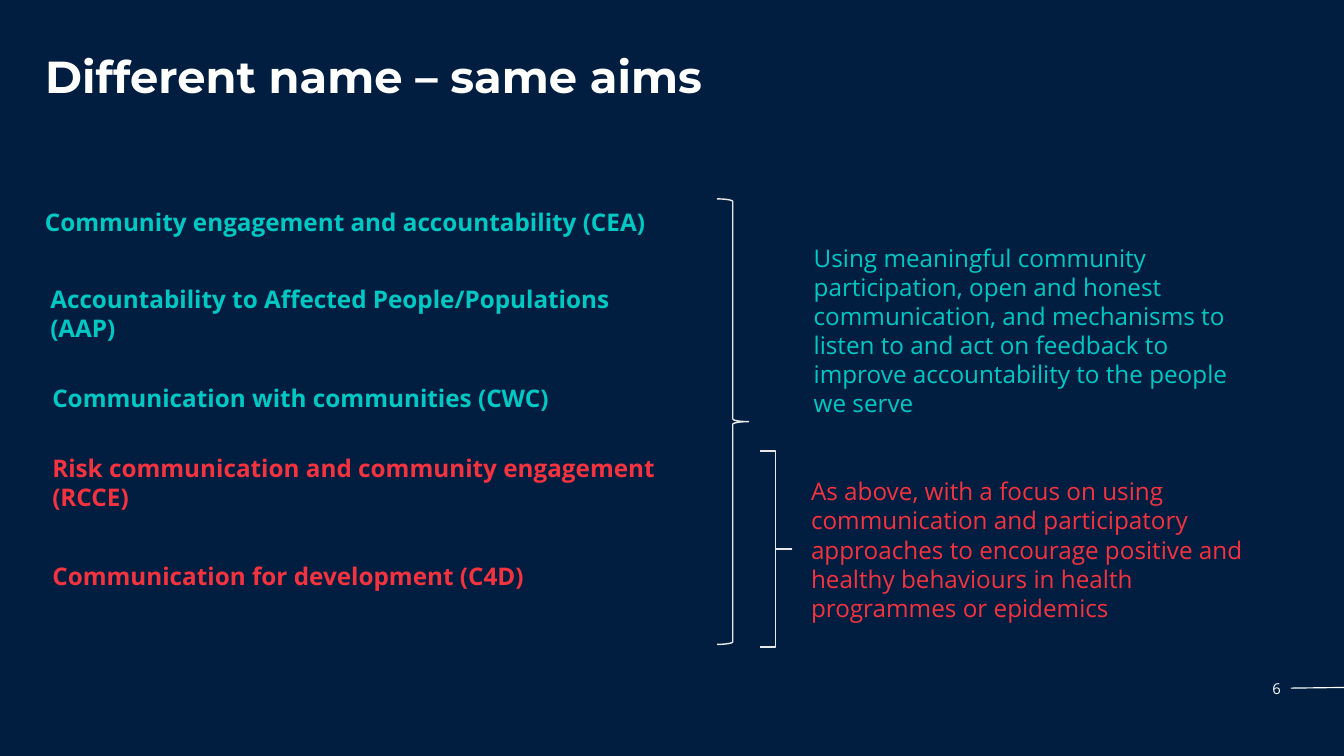
from dataclasses import dataclass

from lxml import etree
from pptx import Presentation
from pptx.dml.color import RGBColor
from pptx.enum.shapes import MSO_CONNECTOR as CONN, MSO_SHAPE as SHAPE
from pptx.enum.text import MSO_ANCHOR as ANCHOR, MSO_AUTO_SIZE as FIT, PP_ALIGN as ALIGN
from pptx.oxml.ns import qn
from pptx.util import Inches, Pt


@dataclass(frozen=True)
class Theme:
    navy: str = "011E41"
    white: str = "FFFFFF"
    teal: str = "01C8C3"
    red: str = "F5333F"
    brace: str = "E8E8E8"
    head_font: str = "Montserrat"
    body_font: str = "Open Sans"
    title_size: int = 48
    body_size: int = 26
    number_size: int = 16


T = Theme()
TITLE = ("Different name – same aims", (0.57, 0.77, 18.85, 1.64))
PAGE_NUMBER = ("6", (18.44, 10.06, 0.72, 0.37))
NUMBER_RULE = (19.21, 10.24, 20, 10.23)
NAMES = [
    ("Community engagement and accountability (CEA)", T.teal, (0.57, 3.03, 9.22, 0.98)),
    ("Accountability to Affected People/Populations (AAP)", T.teal, (0.65, 4.18, 9.42, 1.41)),
    ("Communication with communities (CWC)", T.teal, (0.68, 5.65, 9.86, 0.98)),
    ("Risk communication and community engagement (RCCE)", T.red, (0.68, 6.7, 9.86, 1.41)),
    ("Communication for development (C4D)", T.red, (0.68, 8.31, 8.18, 0.98)),
]
AIMS = [
    ("Using meaningful community participation, open and honest communication, "
     "and mechanisms to listen to and act on feedback to improve accountability "
     "to the people we serve", T.teal, (12.01, 3.55, 6.68, 2.73)),
    ("As above, with a focus on using communication and participatory approaches "
     "to encourage positive and healthy behaviours in health programmes or epidemics",
     T.red, (11.97, 7.03, 6.68, 2.29)),
]
BRACES = [
    ((10.67, 2.96, 0.47, 6.63), 0.083),
    ((11.31, 6.71, 0.47, 2.92), 0),
]


def rgb(color):
    return RGBColor.from_string(color)


def inches(values):
    return [Inches(v) for v in values]


def write(sp, text, color, size, font=T.body_font, bold=False, align=ALIGN.LEFT,
          anchor=ANCHOR.TOP):
    tf = sp.text_frame
    tf.word_wrap = True
    tf.auto_size = FIT.NONE
    tf.vertical_anchor = anchor
    p = tf.paragraphs[0]
    p.text = text
    p.alignment = align
    p.font.name = font
    p.font.size = Pt(size)
    p.font.bold = bold
    p.font.color.rgb = rgb(color)
    return p


def add_text(s, text, color, box, size=T.body_size, **style):
    write(s.shapes.add_textbox(*inches(box)), text, color, size, **style)


def add_title(s, text, box):
    sp = s.shapes.title
    sp.left, sp.top, sp.width, sp.height = inches(box)
    p = write(sp, text, T.white, T.title_size, font=T.head_font, bold=True)
    p.line_spacing = 0.9


def add_brace(s, box, curve):
    sp = s.shapes.add_shape(SHAPE.RIGHT_BRACE, *inches(box))
    sp.adjustments[0] = curve
    sp.adjustments[1] = 0.5
    sp.shadow.inherit = False
    sp.fill.background()
    sp.line.color.rgb = rgb(T.brace)
    sp.line.width = Pt(1.5)


def add_rule(s, ends):
    line = s.shapes.add_connector(CONN.STRAIGHT, *inches(ends))
    line.line.color.rgb = rgb(T.white)
    line.line.width = Pt(1.25)
    etree.SubElement(line._element.spPr, qn("a:effectLst"))


def main():
    prs = Presentation()
    prs.slide_width, prs.slide_height = Inches(20), Inches(11.25)
    s = prs.slides.add_slide(prs.slide_layouts[5])
    s.background.fill.solid()
    s.background.fill.fore_color.rgb = rgb(T.navy)

    number, box = PAGE_NUMBER
    add_text(s, number, T.white, box, size=T.number_size, align=ALIGN.RIGHT)
    add_rule(s, NUMBER_RULE)
    add_title(s, *TITLE)
    for name in NAMES:
        add_text(s, *name, bold=True)
    for brace in BRACES:
        add_brace(s, *brace)
    for aim in AIMS:
        add_text(s, *aim, anchor=ANCHOR.MIDDLE)
    prs.save("out.pptx")


if __name__ == "__main__":
    main()
